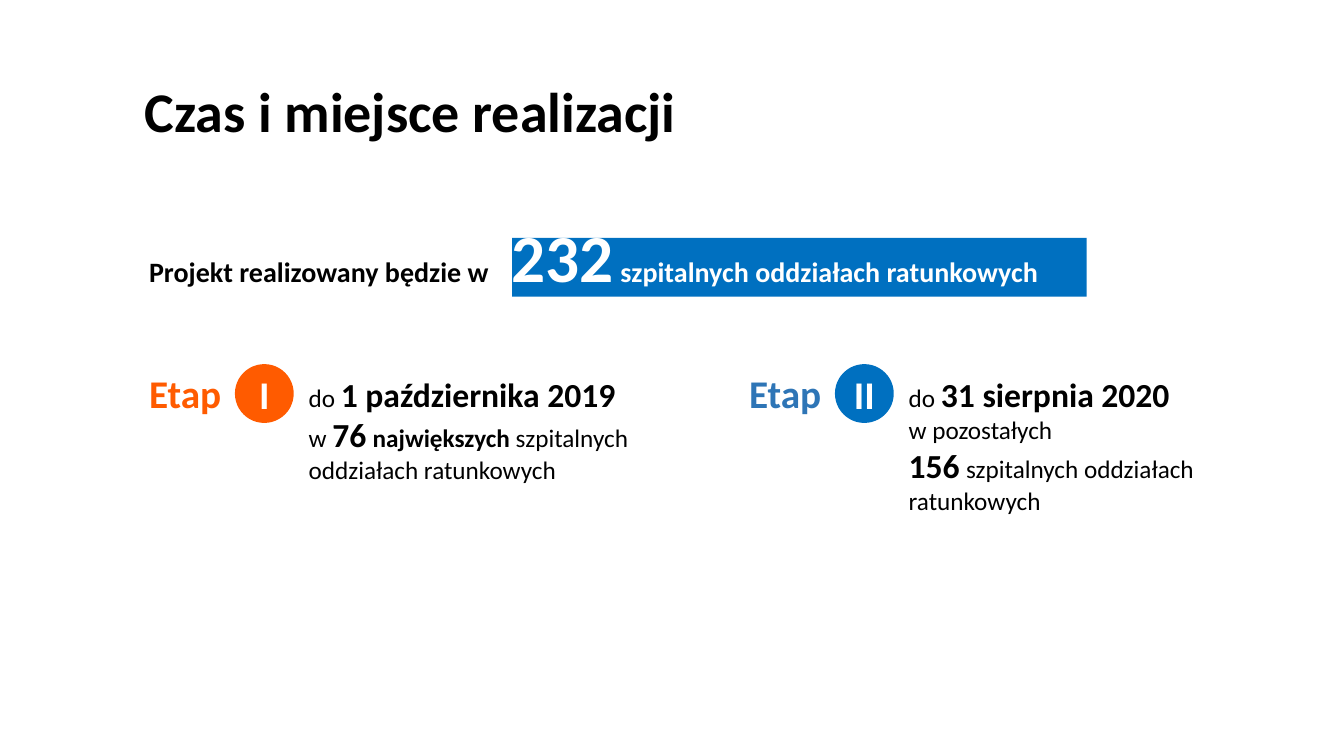
from lxml.etree import SubElement
from pptx import Presentation
from pptx.dml.color import RGBColor
from pptx.enum.shapes import MSO_SHAPE
from pptx.enum.text import MSO_ANCHOR, PP_ALIGN
from pptx.oxml.ns import qn
from pptx.util import Pt

BLACK = RGBColor(0x00, 0x00, 0x00)
WHITE = RGBColor(0xFF, 0xFF, 0xFF)
BLUE = RGBColor(0x00, 0x70, 0xC0)
STEEL = RGBColor(0x2E, 0x75, 0xB6)
ORANGE = RGBColor(0xFF, 0x5B, 0x00)
FONT = "Calibri"
BADGE = 42
INSET = 7.2


def add_run(p, text, size=18, bold=False, color=BLACK):
    r = p.add_run()
    r.text = text
    r.font.name = FONT
    r.font.size = Pt(size)
    r.font.bold = bold
    r.font.color.rgb = color


def add_text_box(slide, x, y, w, h):
    tf = slide.shapes.add_textbox(Pt(x), Pt(y), Pt(w), Pt(h)).text_frame
    tf.word_wrap = True
    return tf


def add_filled(slide, kind, x, y, w, h, color):
    sp = slide.shapes.add_shape(kind, Pt(x), Pt(y), Pt(w), Pt(h))
    sp.shadow.inherit = False
    sp.fill.solid()
    sp.fill.fore_color.rgb = color
    sp.line.fill.background()
    return sp


def add_title(slide, x, y, w, h):
    title = slide.shapes.title
    title.left, title.top, title.width, title.height = Pt(x), Pt(y), Pt(w), Pt(h)
    tf = title.text_frame
    tf.vertical_anchor = MSO_ANCHOR.MIDDLE
    p = tf.paragraphs[0]
    p.alignment = PP_ALIGN.LEFT
    p.line_spacing = 0.9
    add_run(p, "Czas i miejsce realizacji", size=40, bold=True)


def add_headline(slide, x, y, w, h):
    """One line of text whose second half starts, by a tab stop, on a blue bar."""
    bar_offset = 266.4
    add_filled(slide, MSO_SHAPE.RECTANGLE, x + bar_offset, y + 19.5,
               w - bar_offset, 42, BLUE)
    p = add_text_box(slide, x, y, w, h).paragraphs[0]
    tabs = SubElement(p._p.get_or_add_pPr(), qn("a:tabLst"))
    SubElement(tabs, qn("a:tab"), pos=str(Pt(bar_offset - INSET)), algn="l")
    add_run(p, "Projekt realizowany będzie w\t", size=20, bold=True)
    add_run(p, "232", size=48, bold=True, color=WHITE)
    add_run(p, " szpitalnych oddziałach ratunkowych", size=20, bold=True, color=WHITE)


def add_stage(slide, x, y, w, h, numeral, label_color, badge_color, lines):
    """Lines are lists of (text, format) runs, one list per paragraph."""
    badge_x, text_x = 68.4, 114
    label = add_text_box(slide, x, y, badge_x, BADGE).paragraphs[0]
    add_run(label, "Etap", size=28, bold=True, color=label_color)

    badge = add_filled(slide, MSO_SHAPE.OVAL, x + badge_x, y - 0.5, BADGE, BADGE, badge_color)
    tf = badge.text_frame
    tf.word_wrap = False
    tf.margin_left = tf.margin_right = tf.margin_top = tf.margin_bottom = 0
    tf.vertical_anchor = MSO_ANCHOR.MIDDLE
    tf.paragraphs[0].alignment = PP_ALIGN.CENTER
    add_run(tf.paragraphs[0], numeral, size=28, bold=True, color=WHITE)

    tf = add_text_box(slide, x + text_x, y + 3, w - text_x, h)
    for i, runs in enumerate(lines):
        p = tf.add_paragraph() if i else tf.paragraphs[0]
        for text, fmt in runs:
            add_run(p, text, **fmt)


def main():
    prs = Presentation()
    prs.slide_width, prs.slide_height = Pt(960), Pt(540)
    slide = prs.slides.add_slide(prs.slide_layouts[5])
    add_title(slide, 96, 53, 483, 58)
    add_headline(slide, 99.4, 150.5, 676.8, 65.5)

    plain, strong = {}, {"size": 24, "bold": True}
    add_stage(slide, 99.4, 260.6, 394, 87, "I", ORANGE, ORANGE, [
        [("do ", plain), ("1 października 2019", strong)],
        [("w ", plain), ("76", strong), (" ", {"size": 20}),
         ("największych ", {"bold": True}),
         ("szpitalnych oddziałach ratunkowych", plain)],
    ])
    add_stage(slide, 528, 260.6, 362, 109, "II", STEEL, BLUE, [
        [("do ", plain), ("31 sierpnia 2020", strong)],
        [("w pozostałych", plain)],
        [("156", strong), (" ", {"size": 20, "bold": True}),
         ("szpitalnych oddziałach ratunkowych", plain)],
    ])
    prs.save("out.pptx")


if __name__ == "__main__":
    main()
